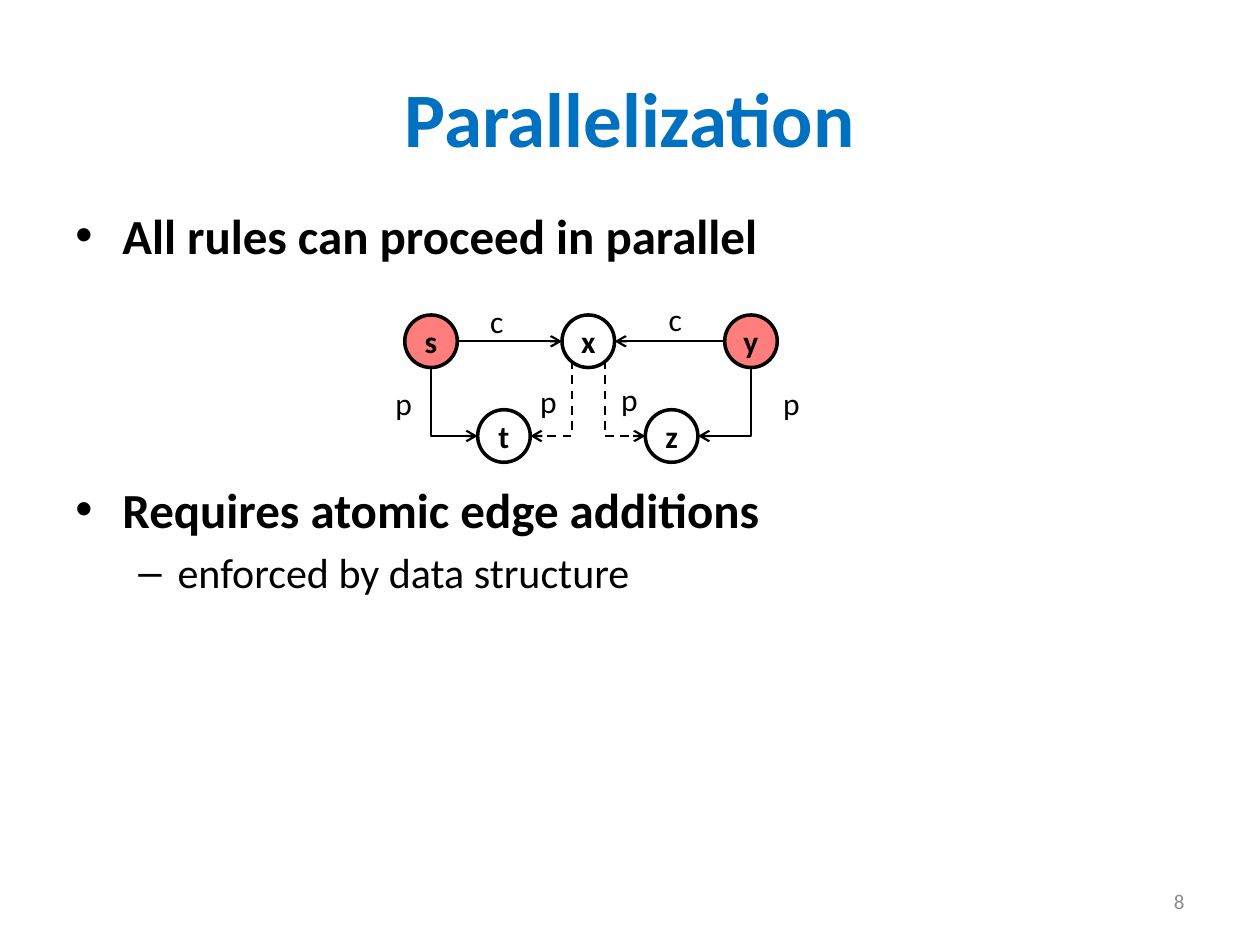
from lxml import etree
from pptx import Presentation
from pptx import util as u
from pptx.dml.color import RGBColor
from pptx.enum import dml, shapes, text
from pptx.oxml.ns import qn

BLUE = RGBColor(0x00, 0x70, 0xC0)
BLACK = RGBColor(0x00, 0x00, 0x00)
WHITE = RGBColor(0xFF, 0xFF, 0xFF)
RED = RGBColor(0xFF, 0x00, 0x00)
GREY = RGBColor(0x8C, 0x8C, 0x8C)

RADIUS = 0.53
TOP_ROW, LOW_ROW = 6.88, 8.79
NODES = {  # centre x, centre y, highlighted
    "s": (8.69, TOP_ROW, True),
    "x": (11.86, TOP_ROW, False),
    "y": (15.14, TOP_ROW, True),
    "t": (10.16, LOW_ROW, False),
    "z": (13.54, LOW_ROW, False),
}
EDGE_LABELS = [
    ("c", 9.63, 5.97), ("c", 13.23, 5.92),
    ("p", 7.72, 7.62), ("p", 10.64, 7.57),
    ("p", 12.27, 7.54), ("p", 15.54, 7.62),
]
BULLETS = [  # text, mark, left margin, hanging indent, format, space before
    ("All rules can proceed in parallel", "•", 0.95, 0.95, {"size": u.Pt(28), "bold": True}, 0),
    ("Requires atomic edge additions", "•", 0.95, 0.95, {"size": u.Pt(28), "bold": True}, 123),
    ("enforced by data structure", "–", 2.06, 0.79, {"size": u.Pt(24), "bold": False}, 5),
]


class GraphSlide:
    font_name = "Calibri"

    def __init__(self, deck):
        self.slide = deck.slides.add_slide(deck.slide_layouts[5])

    def add_words(self, paragraph, words, color=BLACK, **values):
        run = paragraph.add_run()
        run.text = words
        for name, value in {"name": self.font_name, **values}.items():
            setattr(run.font, name, value)
        run.font.color.rgb = color

    def title(self, words):
        heading = self.slide.shapes.title
        place = {"left": 1.27, "top": 0.76, "width": 22.86, "height": 3.18}
        for name, value in place.items():
            setattr(heading, name, u.Cm(value))
        heading.text_frame.vertical_anchor = text.MSO_ANCHOR.MIDDLE
        line = heading.text_frame.paragraphs[0]
        line.alignment = text.PP_ALIGN.CENTER
        self.add_words(line, words, BLUE, size=u.Pt(44), bold=True)

    def text_frame(self, *box):
        frame = self.slide.shapes.add_textbox(*map(u.Cm, box)).text_frame
        frame.word_wrap = True
        return frame

    def bullets(self, items, *box):
        frame = self.text_frame(*box)
        for i, (words, mark, margin, hanging, values, before) in enumerate(items):
            line = frame.add_paragraph() if i else frame.paragraphs[0]
            line.space_before = u.Pt(before)
            props = line._p.get_or_add_pPr()
            props.set("marL", str(u.Cm(margin)))
            props.set("indent", str(-u.Cm(hanging)))
            etree.SubElement(props, qn("a:buFont"), typeface="Arial")
            etree.SubElement(props, qn("a:buChar"), char=mark)
            self.add_words(line, words, **values)

    def label(self, words, left, top):
        frame = self.text_frame(left, top, 1.07, 1.02)
        self.add_words(frame.paragraphs[0], words, size=u.Pt(18))

    def page_number(self, number, *box):
        frame = self.text_frame(*box)
        frame.vertical_anchor = text.MSO_ANCHOR.MIDDLE
        frame.paragraphs[0].alignment = text.PP_ALIGN.RIGHT
        self.add_words(frame.paragraphs[0], number, GREY, size=u.Pt(12))

    def node(self, name, x, y, highlighted):
        circle = self.slide.shapes.add_shape(
            shapes.MSO_SHAPE.OVAL, u.Cm(x - RADIUS), u.Cm(y - RADIUS),
            u.Cm(2 * RADIUS), u.Cm(2 * RADIUS))
        circle.shadow.inherit = False
        circle.fill.solid()
        circle.fill.fore_color.rgb = RED if highlighted else WHITE
        if highlighted:
            tint = circle._element.spPr.find(".//" + qn("a:srgbClr"))
            etree.SubElement(tint, qn("a:alpha"), val="51000")
        circle.line.color.rgb = BLACK
        circle.line.width = u.Pt(2)
        frame = circle.text_frame
        settings = {"margin_left": 0, "margin_right": 0, "margin_top": 0, "margin_bottom": 0,
                    "word_wrap": False, "vertical_anchor": text.MSO_ANCHOR.MIDDLE}
        for key, value in settings.items():
            setattr(frame, key, value)
        frame.paragraphs[0].alignment = text.PP_ALIGN.CENTER
        self.add_words(frame.paragraphs[0], name, size=u.Pt(18), bold=True)

    def arrow(self, kind, x1, y1, x2, y2, dashed=False):
        edge = self.slide.shapes.add_connector(kind, *map(u.Cm, (x1, y1, x2, y2)))
        edge.line.color.rgb = BLACK
        edge.line.width = u.Pt(1.25)
        if dashed:
            edge.line.dash_style = dml.MSO_LINE.DASH
        props = edge._element.spPr
        etree.SubElement(props.find(qn("a:ln")), qn("a:tailEnd"), type="arrow")
        etree.SubElement(props, qn("a:effectLst"))
        return props

    def straight(self, x1, x2, y):
        self.arrow(shapes.MSO_CONNECTOR.STRAIGHT, x1, y, x2, y)

    def down_then_across(self, x1, y1, x2, y2, dashed=False):
        """One-corner connector, turned a quarter so that it starts downwards."""
        mid_x, mid_y = (x1 + x2) / 2, (y1 + y2) / 2
        half_w, half_h = (y2 - y1) / 2, abs(x2 - x1) / 2
        to_right = x2 > x1
        if to_right:  # a rightward run mirrors the connector
            half_w = -half_w
        props = self.arrow(shapes.MSO_CONNECTOR.ELBOW, mid_x - half_w, mid_y - half_h,
                           mid_x + half_w, mid_y + half_h, dashed)
        props.find(qn("a:prstGeom")).set("prst", "bentConnector2")
        props.find(qn("a:xfrm")).set("rot", str((270 if to_right else 90) * 60000))


def main():
    deck = Presentation()
    deck.slide_width, deck.slide_height = u.Cm(25.4), u.Cm(19.05)
    page = GraphSlide(deck)

    # Title, bullets and page number
    page.title("Parallelization")
    page.bullets(BULLETS, 1.27, 4.01, 22.86, 12.57)
    page.page_number("8", 18.21, 17.65, 5.92, 1.02)

    # Graph nodes
    for name, place in NODES.items():
        page.node(name, *place)
    s, x, y, t, z = (NODES[name][0] for name in "sxytz")

    # Existing edges
    page.straight(s + RADIUS, x - RADIUS, TOP_ROW)
    page.straight(y - RADIUS, x + RADIUS, TOP_ROW)
    page.down_then_across(s, TOP_ROW + RADIUS, t - RADIUS, LOW_ROW)
    page.down_then_across(y, TOP_ROW + RADIUS, z + RADIUS, LOW_ROW)

    # Edges added in parallel
    offset, start = 0.33, TOP_ROW + 0.38
    page.down_then_across(x - offset, start, t + RADIUS, LOW_ROW, dashed=True)
    page.down_then_across(x + offset, start, z - RADIUS, LOW_ROW, dashed=True)

    # Edge labels
    for edge_label in EDGE_LABELS:
        page.label(*edge_label)

    deck.save("out.pptx")


if __name__ == "__main__":
    main()
